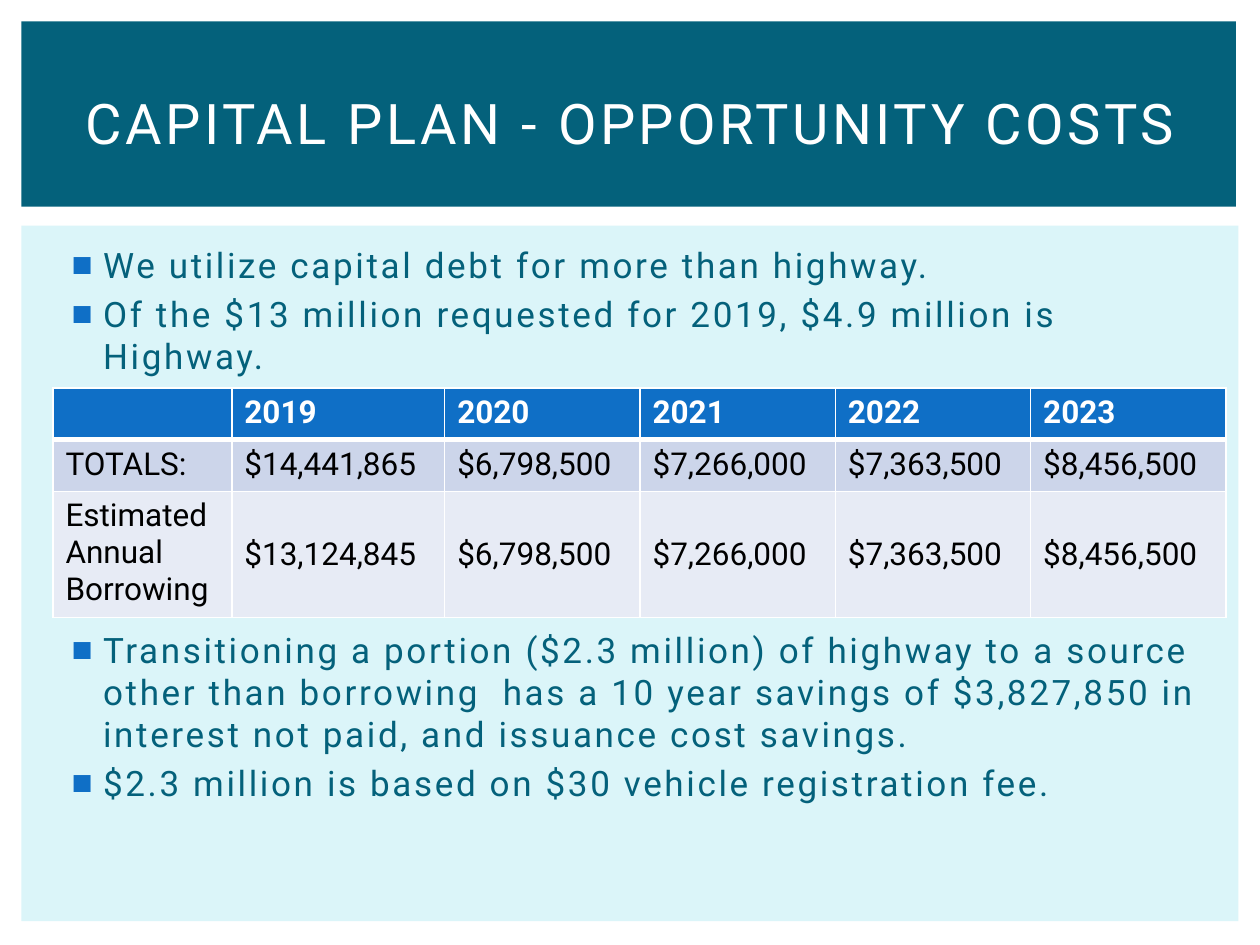
from lxml import etree
from pptx import Presentation
from pptx.dml.color import RGBColor
from pptx.enum.shapes import MSO_SHAPE
from pptx.enum.text import MSO_ANCHOR, PP_ALIGN
from pptx.oxml.ns import qn
from pptx.util import Inches, Pt

RECT = MSO_SHAPE.RECTANGLE
TOP, MIDDLE = MSO_ANCHOR.TOP, MSO_ANCHOR.MIDDLE
CENTER, LEFT = PP_ALIGN.CENTER, PP_ALIGN.LEFT
FONT = "Roboto"
COLORS = {"teal": "04617B", "pale": "DBF5F9", "blue": "0F6FC6",
          "white": "FFFFFF", "black": "000000",
          "band1": "CCD5EA", "band2": "E7EBF5"}

TITLE = "CAPITAL PLAN - OPPORTUNITY COSTS"
PANELS = [("pale", (0.17, 1.79, 9.66, 5.52)),
          ("teal", (0.17, 0.17, 9.64, 1.47))]
BULLETS = [
    ((0.42, 1.88, 9.19, 1.15),
     ["We utilize capital debt for more than highway.",
      "Of the $13 million requested for 2019, $4.9 million is Highway."]),
    ((0.42, 4.94, 9.19, 1.76),
     ["Transitioning a portion ($2.3 million) of highway to a source other "
      "than borrowing  has a 10 year savings of $3,827,850 in interest not "
      "paid, and issuance cost savings.",
      "$2.3 million is based on $30 vehicle registration fee."]),
]
ROWS = [
    ["", "2019", "2020", "2021", "2022", "2023"],
    ["TOTALS:", "$14,441,865", "$6,798,500", "$7,266,000", "$7,363,500",
     "$8,456,500"],
    ["Estimated Annual Borrowing", "$13,124,845", "$6,798,500", "$7,266,000",
     "$7,363,500", "$8,456,500"],
]
ROW_STYLES = [("blue", "white", True), ("band1", "black", False),
              ("band2", "black", False)]
COL_WIDTHS = [1.42, 1.69] + [1.55] * 4
ROW_HEIGHTS = [0.41, 0.41, 0.98]


def rgb(name):
    return RGBColor.from_string(COLORS[name])


def box(at):
    return [Inches(v) for v in at]


def add_run(p, text, size, color, bold=False, spacing=0):
    r = p.add_run()
    r.text = text
    r.font.name, r.font.size, r.font.bold = FONT, Pt(size), bold
    r.font.color.rgb = rgb(color)
    if spacing:
        r.font._element.set("spc", str(int(spacing * 100)))


def add_text(s, at, texts, size, color, spacing, anchor=TOP, align=LEFT):
    tf = s.shapes.add_textbox(*box(at)).text_frame
    tf.word_wrap = True
    tf.vertical_anchor = anchor
    for i, text in enumerate(texts):
        p = tf.add_paragraph() if i else tf.paragraphs[0]
        p.alignment = align
        add_run(p, text, size, color, spacing=spacing)
    return tf


def set_bullet(p):
    p.space_before = Pt(4)
    pPr = p._p.get_or_add_pPr()
    pPr.set("marL", str(Inches(0.3)))
    pPr.set("indent", str(Inches(-0.25)))
    clr = etree.SubElement(pPr, qn("a:buClr"))
    etree.SubElement(clr, qn("a:srgbClr"), val=COLORS["blue"])
    etree.SubElement(pPr, qn("a:buFont"), typeface="Arial")
    etree.SubElement(pPr, qn("a:buChar"), char="■")


def set_borders(cell, widths):
    tcPr = cell._tc.get_or_add_tcPr()
    for i, (side, width) in enumerate(zip("LRTB", widths)):
        ln = etree.Element(qn("a:ln" + side), w=str(Pt(width)))
        fill = etree.SubElement(ln, qn("a:solidFill"))
        etree.SubElement(fill, qn("a:srgbClr"), val=COLORS["white"])
        tcPr.insert(i, ln)


def add_totals_table(s):
    at = (0.42, 3.08, sum(COL_WIDTHS), sum(ROW_HEIGHTS))
    table = s.shapes.add_table(len(ROWS), len(COL_WIDTHS), *box(at)).table
    for col, width in zip(table.columns, COL_WIDTHS):
        col.width = Inches(width)
    for i, (row, (fill, color, bold)) in enumerate(zip(ROWS, ROW_STYLES)):
        table.rows[i].height = Inches(ROW_HEIGHTS[i])
        for j, text in enumerate(row):
            cell = table.cell(i, j)
            cell.fill.solid()
            cell.fill.fore_color.rgb = rgb(fill)
            cell.vertical_anchor = MIDDLE if i == 2 and j else TOP
            set_borders(cell, (1, 1, 3 if i == 1 else 1, 3 if i == 0 else 1))
            if text:
                add_run(cell.text_frame.paragraphs[0], text, 18, color, bold)


def main():
    prs = Presentation()
    prs.slide_width, prs.slide_height = Inches(10), Inches(7.5)
    s = prs.slides.add_slide(prs.slide_layouts[6])
    for color, at in PANELS:
        sp = s.shapes.add_shape(RECT, *box(at))
        sp.shadow.inherit = False
        sp.fill.solid()
        sp.fill.fore_color.rgb = rgb(color)
        sp.line.fill.background()
    for at, texts in BULLETS:
        for p in add_text(s, at, texts, 20, "teal", 1.5).paragraphs:
            set_bullet(p)
    add_text(s, (0.42, 0.39, 9.17, 1.15), [TITLE], 32, "white", 2,
             MIDDLE, CENTER)
    add_totals_table(s)
    prs.save("out.pptx")


if __name__ == "__main__":
    main()
